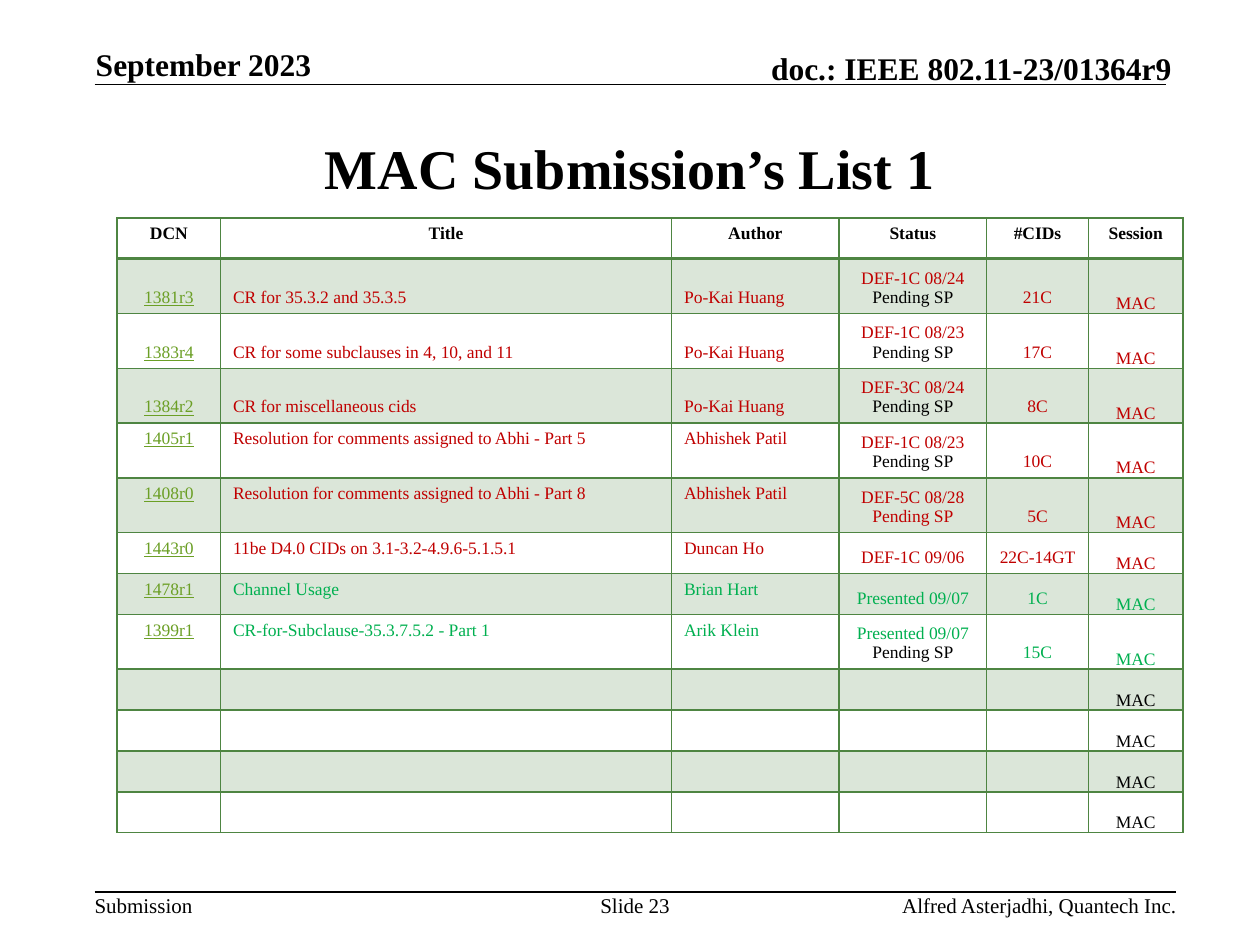
from lxml import etree
from pptx import Presentation
from pptx import util as u
from pptx.dml.color import RGBColor
from pptx.enum import shapes, text
from pptx.oxml.ns import qn

BLACK = RGBColor(0, 0, 0)
RED = RGBColor(0xC0, 0, 0)
GREEN = RGBColor(0, 0xB0, 0x50)
LINK = RGBColor(0x6B, 0x9F, 0x25)
GRID = RGBColor(0x4E, 0x85, 0x42)
FACE = "Times New Roman"
LEFT, MID, RIGHT = text.PP_ALIGN.LEFT, text.PP_ALIGN.CENTER, text.PP_ALIGN.RIGHT
TOP, LOW = text.MSO_ANCHOR.TOP, text.MSO_ANCHOR.BOTTOM

HEADS = ["DCN", "Title", "Author", "Status", "#CIDs", "Session"]
COLS = [0.82, 3.58, 1.33, 1.17, 0.81, 0.75]
PEND = "\nPending SP"
# DCN, title, author, status, CIDs, main colour, colour of the pending line
ITEMS = [
    ("1381r3", "CR for 35.3.2 and 35.3.5", "Po-Kai Huang", "DEF-1C 08/24" + PEND, "21C", RED, BLACK),
    ("1383r4", "CR for some subclauses in 4, 10, and 11", "Po-Kai Huang", "DEF-1C 08/23" + PEND, "17C", RED, BLACK),
    ("1384r2", "CR for miscellaneous cids", "Po-Kai Huang", "DEF-3C 08/24" + PEND, "8C", RED, BLACK),
    ("1405r1", "Resolution for comments assigned to Abhi - Part 5", "Abhishek Patil",
     "DEF-1C 08/23" + PEND, "10C", RED, BLACK),
    ("1408r0", "Resolution for comments assigned to Abhi - Part 8", "Abhishek Patil",
     "DEF-5C 08/28" + PEND, "5C", RED, RED),
    ("1443r0", "11be D4.0 CIDs on 3.1-3.2-4.9.6-5.1.5.1", "Duncan Ho", "DEF-1C 09/06", "22C-14GT", RED, RED),
    ("1478r1", "Channel Usage", "Brian Hart", "Presented 09/07", "1C", GREEN, GREEN),
    ("1399r1", "CR-for-Subclause-35.3.7.5.2 - Part 1", "Arik Klein",
     "Presented 09/07" + PEND, "15C", GREEN, BLACK),
] + [("", "", "", "", "", BLACK, BLACK)] * 4
LOW_ROWS = 3  # leading items whose first columns sit at the cell bottom


def style(para, size, color=BLACK, bold=False, align=LEFT):
    para.alignment = align
    for run in para.runs:
        font = run.font
        font.name, font.size, font.bold = FACE, u.Pt(size), bold
        font.color.rgb = color


def add_label(slide, words, box, size, align=LEFT, bold=False, anchor=TOP):
    frame = slide.shapes.add_textbox(*map(u.Inches, box)).text_frame
    frame.margin_left = frame.margin_right = frame.margin_top = frame.margin_bottom = 0
    frame.word_wrap, frame.vertical_anchor = True, anchor
    frame.text = words
    style(frame.paragraphs[0], size, bold=bold, align=align)


def add_rule(slide, right, y):
    line = slide.shapes.add_connector(
        shapes.MSO_CONNECTOR.STRAIGHT, *map(u.Inches, (0.75, y, right, y)))
    line.line.color.rgb, line.line.width = BLACK, u.Pt(1)
    etree.SubElement(line._element.spPr, qn("a:effectLst"))


def add_title(slide, words):
    title = slide.shapes.title
    title.left, title.top, title.width, title.height = map(u.Inches, (0.75, 0.75, 8.5, 1.16))
    title.text_frame.text = words
    title.text_frame.vertical_anchor = text.MSO_ANCHOR.MIDDLE
    style(title.text_frame.paragraphs[0], 32, bold=True, align=MID)


def set_grid(cell, head):
    """Draw the four borders, with a heavy one under the header."""
    props = cell._tc.get_or_add_tcPr()
    for i, side in enumerate(("lnL", "lnR", "lnT", "lnB")):
        width = u.Pt(2 if head and side == "lnB" else 1)
        line = etree.Element(qn("a:" + side), w=str(width))
        fill = etree.SubElement(line, qn("a:solidFill"))
        etree.SubElement(fill, qn("a:srgbClr"), val=str(GRID))
        props.insert(i, line)


def set_band(cell, tinted):
    if not tinted:
        cell.fill.background()
        return
    cell.fill.solid()
    cell.fill.fore_color.rgb = GRID
    shade = cell._tc.tcPr.find(".//" + qn("a:srgbClr"))
    etree.SubElement(shade, qn("a:alpha"), val="20000")


def fill_cell(cell, words, colors, align, anchor, bold=False):
    """Write one line per paragraph, each in its own colour."""
    cell.text_frame.text = words
    cell.vertical_anchor = anchor
    for para, color in zip(cell.text_frame.paragraphs, colors):
        style(para, 10, color, bold, align)
        if not words:
            etree.SubElement(para._p, qn("a:endParaRPr"), sz="1000")


def add_list(slide):
    table = slide.shapes.add_table(
        len(ITEMS) + 1, len(COLS), u.Inches(0.93), u.Inches(1.73),
        u.Inches(sum(COLS)), u.Inches(4.7)).table
    for col, width in zip(table.columns, COLS):
        col.width = u.Inches(width)
    table.rows[0].height = u.Pt(23.4)
    for c, head in enumerate(HEADS):
        fill_cell(table.cell(0, c), head, [BLACK], MID, TOP, True)
    for r, (*words, main_col, pend) in enumerate(ITEMS, 1):
        table.rows[r].height = u.Pt(29.2 if PEND in words[3] else 23.4)
        for c, word in enumerate(words + ["MAC"]):
            cell = table.cell(r, c)
            anchor = LOW if c > 2 or r <= LOW_ROWS else TOP
            colors = [LINK if c == 0 else main_col, pend]
            fill_cell(cell, word, colors, LEFT if c in (1, 2) else MID, anchor)
            if c == 0:
                for run in cell.text_frame.paragraphs[0].runs:
                    run.font.underline = True
        cell.margin_left = cell.margin_right = cell.margin_top = cell.margin_bottom = 0
    for r in range(len(ITEMS) + 1):
        for c in range(len(COLS)):
            set_band(table.cell(r, c), r % 2 == 1)
            set_grid(table.cell(r, c), r == 0)


def main():
    deck = Presentation()
    deck.slide_width, deck.slide_height = u.Inches(10), u.Inches(7.5)
    slide = deck.slides.add_slide(deck.slide_layouts[5])
    add_rule(slide, 9.25, 0.67)
    add_rule(slide, 9.33, 7.08)
    add_label(slide, "September 2023", (0.76, 0.36, 2.05, 0.3), 18, bold=True, anchor=LOW)
    add_label(slide, "doc.: IEEE 802.11-23/01364r9", (5.47, 0.39, 3.83, 0.3), 18, RIGHT, True, LOW)
    add_title(slide, "MAC Submission’s List 1")
    add_list(slide)
    add_label(slide, "Submission", (0.75, 7.08, 0.78, 0.2), 12)
    add_label(slide, "Slide 23", (4.75, 7.08, 0.58, 0.4), 12, MID)
    add_label(slide, "Alfred Asterjadhi, Quantech Inc.", (5.86, 7.08, 3.48, 0.2), 12, RIGHT)
    deck.save("out.pptx")


if __name__ == "__main__":
    main()
